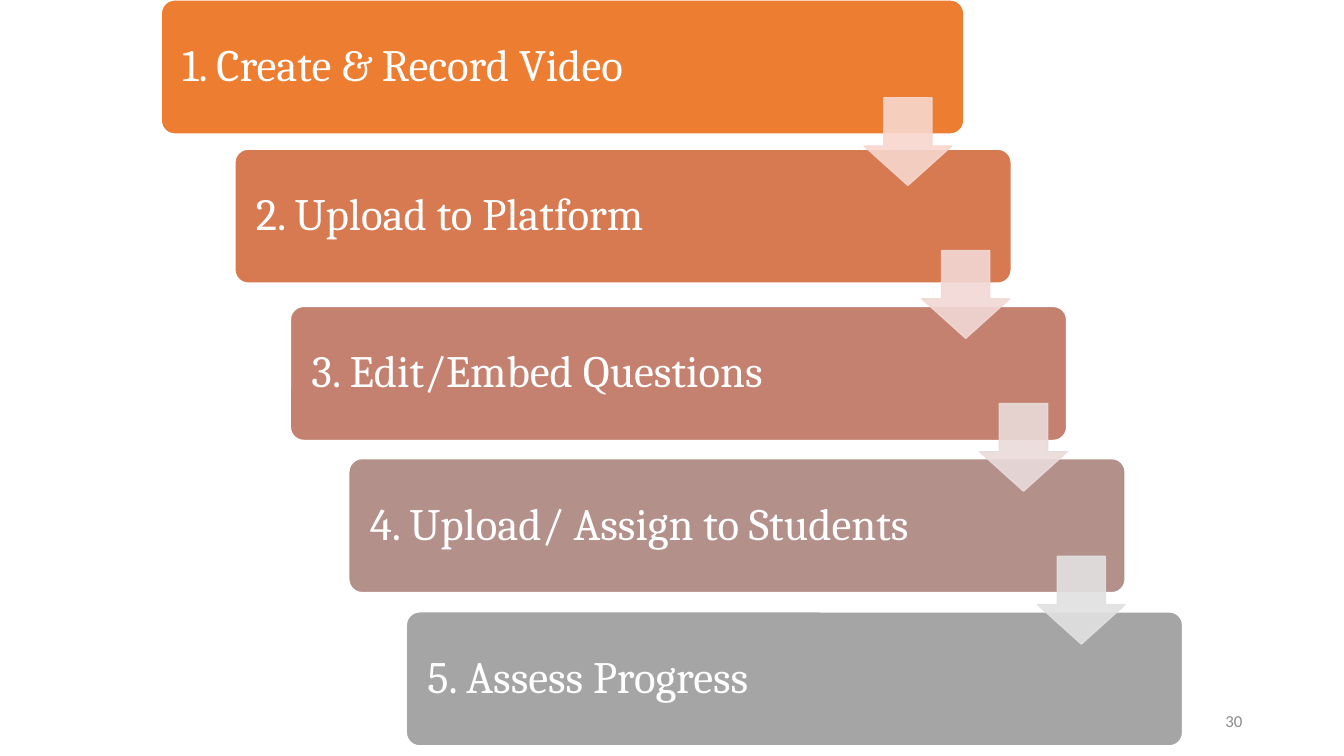
from pptx import Presentation
from pptx.dml.color import RGBColor
from pptx.enum.shapes import MSO_SHAPE as Shape
from pptx.enum.text import MSO_ANCHOR as Anchor, PP_ALIGN as Align
from pptx.oxml.ns import qn
from pptx.util import Inches, Pt
from lxml.etree import SubElement

COLORS = {
    "white": "FFFFFF",
    "number": "8C8C8C",
    "steps": ["ED7D31", "D87A51", "C48170", "B4908B", "A5A5A5"],
    "arrows": ["F8D7CE", "F1D8D4", "E9DBDA", "E1E1E1"],
}
STEPS = [
    ("1. Create & Record Video", 1.6, 0, 7.96),
    ("2. Upload to Platform", 2.33, 1.48, 7.7),
    ("3. Edit/Embed Questions", 2.88, 3.04, 7.7),
    ("4. Upload/ Assign to Students", 3.46, 4.55, 7.7),
    ("5. Assess Progress", 4.03, 6.07, 7.7),
]
STEP_HEIGHT = 1.33
ARROW_SIZE = 0.87
FIRST_ARROW = (8.57, 0.97)
LAST_ARROW = (10.29, 5.52)


def write_line(frame, text, font_name, size, color, align):
    """Write one formatted, vertically centred line and return its paragraph."""
    frame.word_wrap = True
    frame.vertical_anchor = Anchor.MIDDLE
    line = frame.paragraphs[0]
    line.text = text
    line.alignment = align
    font = line.runs[0].font
    font.name, font.size = font_name, Pt(size)
    font.color.rgb = RGBColor.from_string(color)
    return line


def add_block(slide, preset, box, adjustments, fill, outline):
    """Add a flat preset shape with its fill, outline and adjustments."""
    block = slide.shapes.add_shape(preset, *map(Inches, box))
    block.shadow.inherit = False
    for index, value in enumerate(adjustments):
        block.adjustments[index] = value
    block.fill.solid()
    block.fill.fore_color.rgb = RGBColor.from_string(fill)
    block.line.color.rgb = RGBColor.from_string(outline)
    block.line.width = Pt(1)
    return block


def add_step(slide, box, label, color):
    """Add one step bar with its label inside."""
    step = add_block(slide, Shape.ROUNDED_RECTANGLE, box, [0.1], color, COLORS["white"])
    frame = step.text_frame
    frame.margin_left = frame.margin_right = Inches(0.17)
    line = write_line(frame, label, "Cambria", 32, COLORS["white"], Align.LEFT)
    line.line_spacing = 0.9


def add_arrow(slide, box, color):
    """Add one slightly transparent arrow leading to the next step."""
    arrow = add_block(slide, Shape.DOWN_ARROW, box, [0.55, 0.45], color, color)
    for srgb in arrow.element.spPr.iter(qn("a:srgbClr")):
        SubElement(srgb, qn("a:alpha")).set("val", "90000")


def add_staircase(slide):
    """Add the step bars and then the evenly spaced arrows between them."""
    for (label, left, top, width), color in zip(STEPS, COLORS["steps"]):
        add_step(slide, (left, top, width, STEP_HEIGHT), label, color)
    gaps = len(COLORS["arrows"]) - 1
    for index, color in enumerate(COLORS["arrows"]):
        left, top = (
            first + (last - first) * index / gaps
            for first, last in zip(FIRST_ARROW, LAST_ARROW)
        )
        add_arrow(slide, (left, top, ARROW_SIZE, ARROW_SIZE), color)


def add_page_number(slide, box, number):
    """Add the right-aligned page number."""
    page_number = slide.shapes.add_textbox(*map(Inches, box))
    write_line(page_number.text_frame, number, "Calibri", 12, COLORS["number"], Align.RIGHT)


def main():
    """Build and save the slide."""
    deck = Presentation()
    deck.slide_width, deck.slide_height = Inches(13.33), Inches(7.5)
    slide = deck.slides.add_slide(deck.slide_layouts[6])
    add_staircase(slide)
    add_page_number(slide, (9.42, 6.95, 3, 0.4), "30")
    deck.save("out.pptx")


if __name__ == "__main__":
    main()
